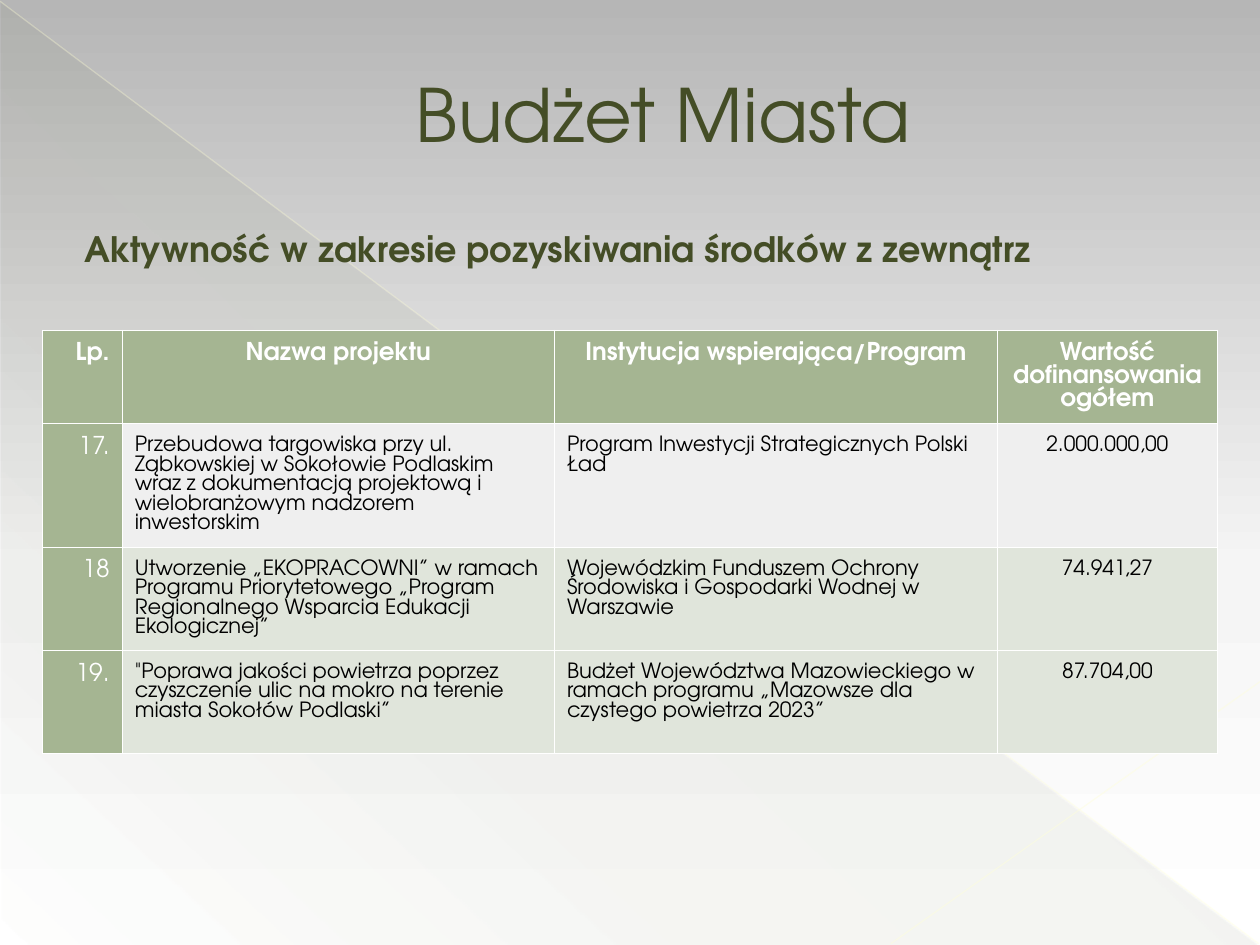
import pptx
import pptx.util
import pptx.dml.color
import pptx.enum.shapes
import pptx.enum.text
import pptx.oxml
import pptx.oxml.ns
from lxml import etree

COLORS = {
    "olive": "444D26", "sage": "A5B592", "pale": "EFEFEF", "mint": "E0E5DB",
    "white": "FFFFFF", "black": "000000", "cream": "FFFFD5", "ivory": "FFFFD9",
    "top": "B6B6B6", "mid": "F5F5F5",
}
ALIGN = pptx.enum.text.PP_ALIGN
ANCHOR = pptx.enum.text.MSO_ANCHOR
COLS, ROWS = 100, 75

HEADS = ["Lp.", "Nazwa projektu", "Instytucja wspierająca/Program",
         "Wartość dofinansowania ogółem"]
PROJECTS = [
    ["17.", "Przebudowa targowiska przy ul. Ząbkowskiej w Sokołowie Podlaskim "
     "wraz z dokumentacją projektową i wielobranżowym nadzorem inwestorskim",
     "Program Inwestycji Strategicznych Polski Ład", "2.000.000,00"],
    ["18", "Utworzenie „EKOPRACOWNI” w ramach Programu Priorytetowego „Program "
     "Regionalnego Wsparcia Edukacji Ekologicznej”",
     "Wojewódzkim Funduszem Ochrony Środowiska i Gospodarki Wodnej w Warszawie",
     "74.941,27"],
    ["19.", "\"Poprawa jakości powietrza poprzez czyszczenie ulic na mokro na "
     "terenie miasta Sokołów Podlaski”",
     "Budżet Województwa Mazowieckiego w ramach programu „Mazowsze dla "
     "czystego powietrza 2023”", "87.704,00"],
]


def rgb(name):
    return pptx.dml.color.RGBColor.from_string(COLORS[name])


def add(parent, tag, **attrs):
    """Append a DrawingML child and return it."""
    node = etree.SubElement(parent, pptx.oxml.ns.qn("a:" + tag))
    for key, value in attrs.items():
        node.set(key, str(value))
    return node


def tint(parent, name, alpha=100):
    node = add(parent, "srgbClr", val=COLORS[name])
    if alpha < 100:
        add(node, "alpha", val=alpha * 1000)


def blend(fill, holder, stops, angle):
    """Give a fill a linear gradient of (position, colour, opacity) stops."""
    fill.gradient()
    grad = holder.find(".//" + pptx.oxml.ns.qn("a:gradFill"))
    for child in list(grad):
        grad.remove(child)
    group = add(grad, "gsLst")
    for pos, name, alpha in stops:
        tint(add(group, "gs", pos=pos * 1000), name, alpha)
    add(grad, "lin", ang=angle * 60000, scaled=0)


class Deck:
    """Slide on a grid of 100 columns by 75 rows."""

    font = "TeX Gyre Adventor"

    def __init__(self):
        self.prs = pptx.Presentation()
        self.prs.slide_width = pptx.util.Inches(10)
        self.prs.slide_height = pptx.util.Inches(7.5)
        self.slide = self.prs.slides.add_slide(self.prs.slide_layouts[6])
        self.shapes = self.slide.shapes

    def x(self, cols):
        return round(self.prs.slide_width * cols / COLS)

    def y(self, rows):
        return round(self.prs.slide_height * rows / ROWS)

    def box(self, left, top, width, height):
        return self.x(left), self.y(top), self.x(width), self.y(height)

    def back(self, stops, angle):
        ground = self.slide.background
        blend(ground.fill, self.slide.element, stops, angle)

    def wedge(self, area, stops, angle):
        kind = pptx.enum.shapes.MSO_SHAPE.RIGHT_TRIANGLE
        shape = self.shapes.add_shape(kind, *self.box(*area))
        shape.shadow.inherit = False
        shape.line.fill.background()
        blend(shape.fill, shape.element.spPr, stops, angle)

    def line(self, start, end, color, alpha):
        kind = pptx.enum.shapes.MSO_CONNECTOR.STRAIGHT
        line = self.shapes.add_connector(
            kind, self.x(start[0]), self.y(start[1]),
            self.x(end[0]), self.y(end[1]))
        line.line.width = pptx.util.Pt(0.75)
        line.line.color.rgb = rgb(color)
        shade = line.element.spPr.find(".//" + pptx.oxml.ns.qn("a:srgbClr"))
        add(shade, "alpha", val=alpha * 1000)
        add(line.element.spPr, "effectLst")

    def style(self, frame, size, color, bold=False, align=ALIGN.LEFT):
        for para in frame.paragraphs:
            para.alignment = align
            for run in para.runs:
                run.font.name = self.font
                run.font.size = pptx.util.Pt(size)
                run.font.bold = bold
                run.font.color.rgb = rgb(color)

    def text(self, words, area, size, indent, bold=False,
             align=ALIGN.LEFT, anchor=ANCHOR.TOP):
        frame = self.shapes.add_textbox(*self.box(*area)).text_frame
        frame.word_wrap = True
        frame.vertical_anchor = anchor
        frame.text = words
        self.style(frame, size, "olive", bold, align)
        props = frame.paragraphs[0]._p.get_or_add_pPr()
        props.set("marL", str(self.x(indent)))
        props.set("indent", "0")

    def cell(self, cell, words, fill, size, color, bold, align):
        cell.fill.solid()
        cell.fill.fore_color.rgb = rgb(fill)
        cell.margin_left = cell.margin_right = self.x(1)
        cell.margin_top = cell.margin_bottom = self.y(1)
        cell.text_frame.text = words
        self.style(cell.text_frame, size, color, bold, align)
        tight = pptx.util.Pt(round(size * 0.925, 1))
        cell.text_frame.paragraphs[0].line_spacing = tight
        props = cell._tc.get_or_add_tcPr()
        for at, side in enumerate(("lnL", "lnR", "lnT", "lnB")):
            edge = add(props, side, w=pptx.util.Pt(0.75))
            tint(add(edge, "solidFill"), "white")
            props.insert(at, edge)

    def table(self, left, top, widths, heights, data, fills):
        area = self.box(left, top, sum(widths), sum(heights))
        table = self.shapes.add_table(len(data), len(widths), *area).table
        for col, width in zip(table.columns, widths):
            col.width = self.x(width)
        for row, height in zip(table.rows, heights):
            row.height = self.y(height)
        aligns = [ALIGN.RIGHT, ALIGN.LEFT, ALIGN.LEFT, ALIGN.CENTER]
        for r, row in enumerate(data):
            for c, words in enumerate(row):
                head = r == 0
                key = head or c == 0
                align = ALIGN.CENTER if head and c else aligns[c]
                self.cell(table.cell(r, c), words,
                          "sage" if key else fills[r - 1],
                          14 if key else 12,
                          "white" if key else "black", head, align)


def main():
    deck = Deck()
    deck.back([(0, "top", 100), (60, "mid", 100), (100, "white", 100)], 90)
    deck.wedge((0.1, 0.2, 99.8, 74.8),
               [(0, "olive", 7), (70, "olive", 5), (100, "olive", 0)], 133)
    deck.line((0, 0.1), (99.9, 74.9), "cream", 33)
    deck.line((100, 54.1), (70.7, 74.9), "ivory", 42)
    deck.text("Budżet Miasta", (5, 2.9, 90, 12.1), 42, 5.3,
              align=ALIGN.CENTER, anchor=ANCHOR.MIDDLE)
    deck.text("Aktywność w zakresie pozyskiwania środków z zewnątrz",
              (5, 17.6, 90, 6), 20, 0.7, bold=True)
    deck.table(3.4, 26.2, [6.3, 34.3, 35.2, 17.4], [7.4, 9.8, 8.2, 8.2],
               [HEADS] + PROJECTS, ["pale", "mint", "mint"])
    deck.prs.save("out.pptx")


if __name__ == "__main__":
    main()
